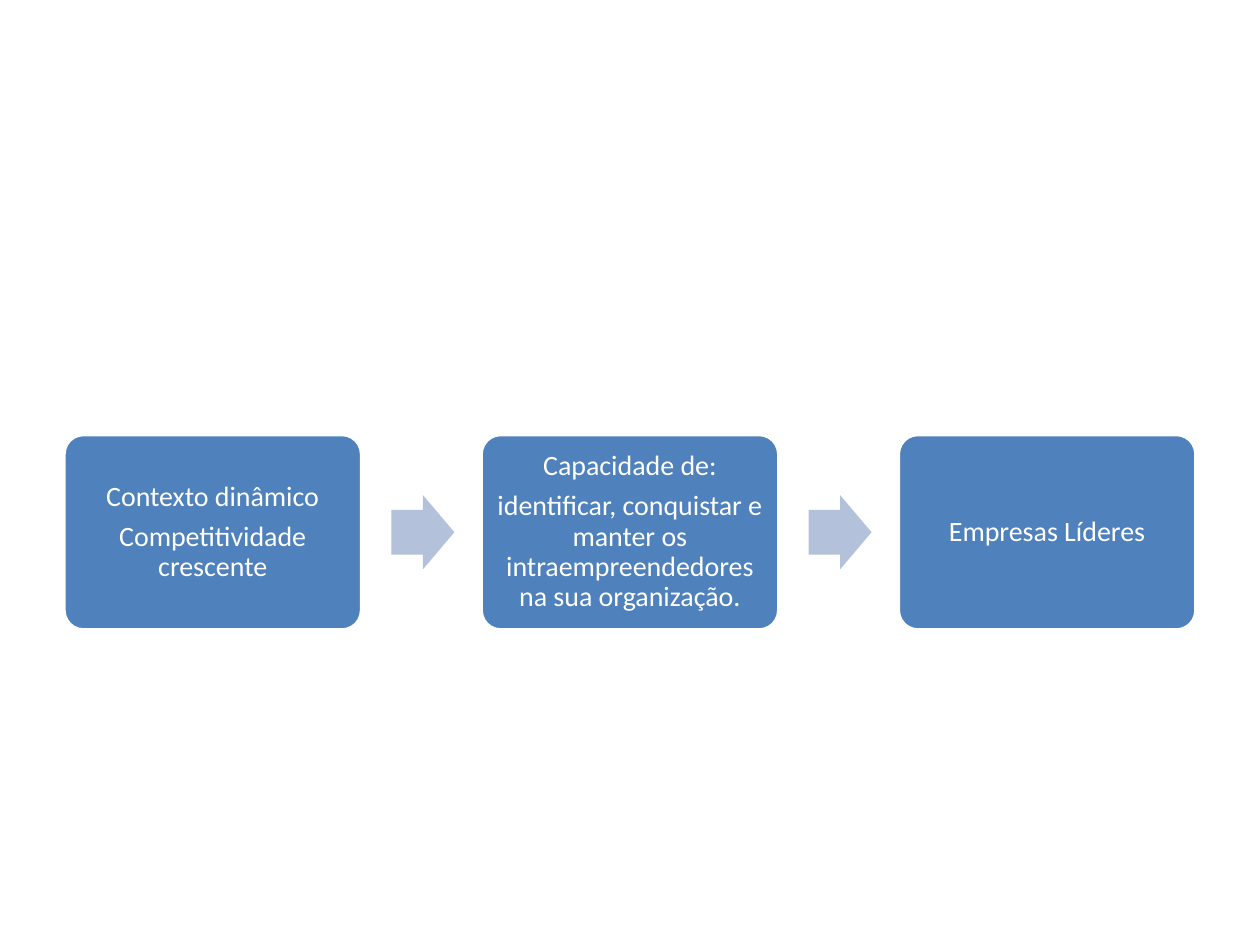
from dataclasses import dataclass

from pptx import Presentation
from pptx.dml.color import RGBColor
from pptx.enum.shapes import MSO_SHAPE
from pptx.enum.text import MSO_ANCHOR, PP_ALIGN
from pptx.util import Cm, Pt

ROUND_RECT = MSO_SHAPE.ROUNDED_RECTANGLE
ARROW = MSO_SHAPE.RIGHT_ARROW
MIDDLE = MSO_ANCHOR.MIDDLE
CENTER = PP_ALIGN.CENTER


@dataclass(frozen=True)
class Theme:
    font: str = "Calibri"
    size: float = 16
    text: RGBColor = RGBColor(0xFF, 0xFF, 0xFF)
    box: RGBColor = RGBColor(0x4F, 0x81, 0xBD)
    border: RGBColor = RGBColor(0xFF, 0xFF, 0xFF)
    arrow: RGBColor = RGBColor(0xB3, 0xC1, 0xDB)


theme = Theme()


def add_block(shapes, kind, left, mid, width, height, fill, adjustments):
    """Add a filled shape centred vertically on mid; lengths in cm."""
    sp = shapes.add_shape(kind, Cm(left), Cm(mid - height / 2), Cm(width), Cm(height))
    for i, value in enumerate(adjustments):
        sp.adjustments[i] = value
    sp.shadow.inherit = False
    sp.fill.solid()
    sp.fill.fore_color.rgb = fill
    sp.line.fill.background()
    return sp


def write(tf, text, *, size=theme.size, color=theme.text, align=CENTER,
          spacing=0.9, after=0.35, inset=0.18):
    """Write one paragraph per line; after is a share of the type size."""
    tf.word_wrap = True
    tf.vertical_anchor = MIDDLE
    tf.margin_left = tf.margin_right = tf.margin_top = tf.margin_bottom = Cm(inset)
    for i, line in enumerate(text.split("\n")):
        p = tf.paragraphs[0] if i == 0 else tf.add_paragraph()
        p.alignment = align
        p.line_spacing = spacing
        p.space_after = Pt(size * after)
        r = p.add_run()
        r.text = line
        r.font.name = theme.font
        r.font.size = Pt(size)
        r.font.color.rgb = color


prs = Presentation()
prs.slide_width, prs.slide_height = Cm(25.4), Cm(19.05)
s = prs.slides.add_slide(prs.slide_layouts[6])

steps = [
    "Contexto dinâmico\nCompetitividade crescente",
    "Capacidade de:\nidentificar, conquistar e manter os intraempreendedores na sua organização.",
    "Empresas Líderes",
]
box_w, box_h = 6, 3.94
arrow_w, arrow_h = 1.27, 1.5
pitch, mid, arrow_gap = 8.41, 10.73, 0.6
first = (25.4 - 2 * pitch - box_w) / 2

for i, text in enumerate(steps):
    left = first + i * pitch
    if i:
        arrow_left = left - pitch + box_w + arrow_gap
        add_block(s.shapes, ARROW, arrow_left, mid, arrow_w, arrow_h, theme.arrow, [0.6, 0.5])
    sp = add_block(s.shapes, ROUND_RECT, left, mid, box_w, box_h, theme.box, [0.1])
    sp.line.color.rgb = theme.border
    sp.line.width = Pt(2)
    write(sp.text_frame, text)

prs.save("out.pptx")
